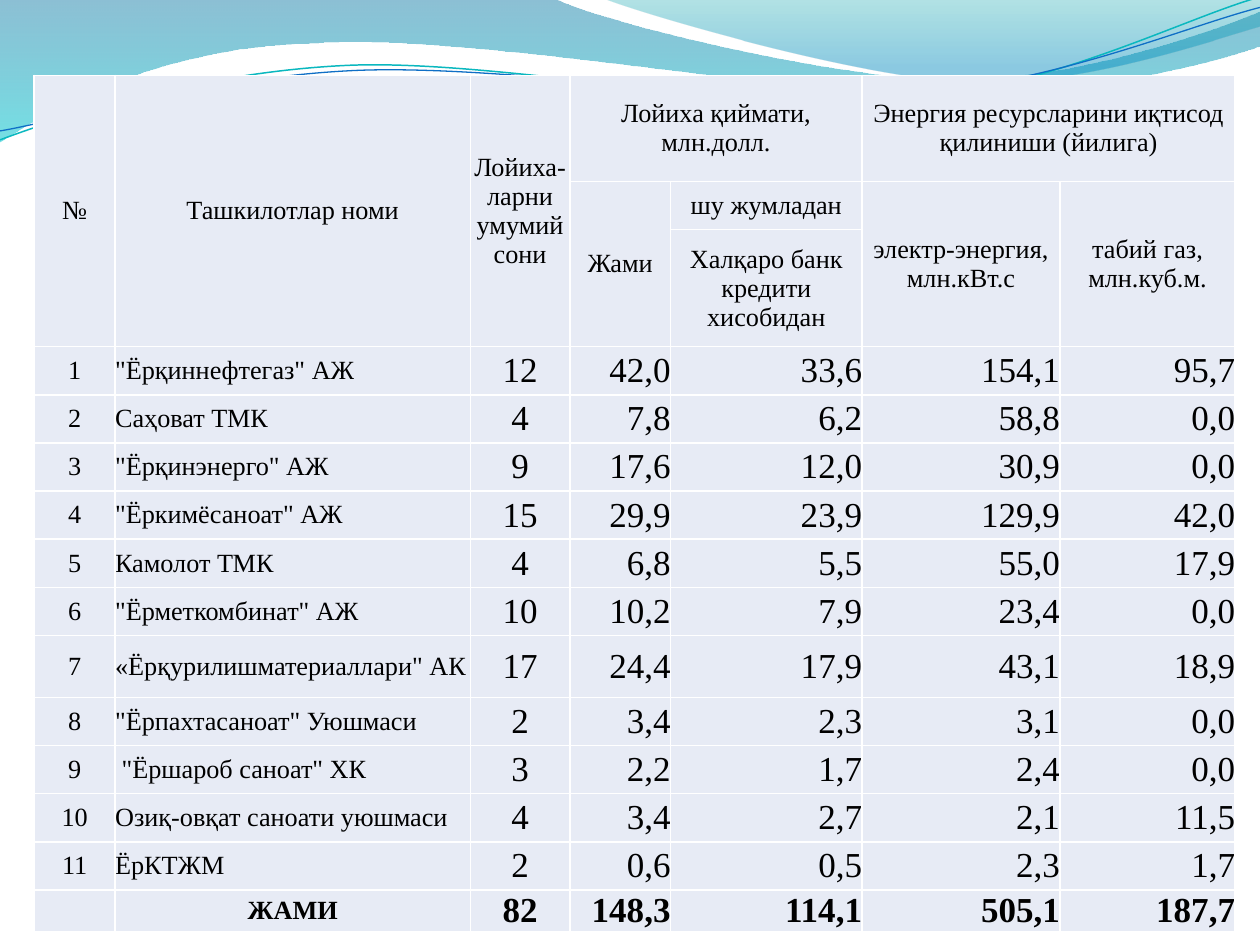
from itertools import product

from lxml.etree import SubElement
from pptx import Presentation
from pptx.dml.color import RGBColor
from pptx.enum.text import MSO_ANCHOR as ANCHOR, PP_ALIGN as ALIGN
from pptx.oxml.ns import qn
from pptx.util import Cm, Pt

FONT = "Times New Roman"
BLACK = RGBColor(0x00, 0x00, 0x00)
WHITE = RGBColor(0xFF, 0xFF, 0xFF)
CELL = RGBColor(0xE7, 0xEB, 0xF5)
BLUE = RGBColor(0x0F, 0x6F, 0xC6)
TEAL = RGBColor(0x0A, 0xB8, 0xBF)
# Gradient stops: position, colour, opacity in percent
BACK_STOPS = [(0, RGBColor(0x00, 0x74, 0xA1), 45), (1, RGBColor(0x00, 0xC6, 0xCF), 55)]
FRONT_STOPS = [(0, RGBColor(0x00, 0xA1, 0xA9), 30), (0.8, RGBColor(0x00, 0x8B, 0xBF), 45)]

# Wave outlines in cm: a pair is a line end, six numbers are a Bezier curve
BACK_WAVE = [
    (0, 0), (11.18, -0.03),
    (12.09, 0.43, 16.87, 1.6, 19.25, 1.6),
    (21.67, 1.6, 24.33, 0.66, 25.4, 0.23),
    (25.43, 0.91),
    (24.97, 1.12, 22.1, 1.93, 18.95, 1.91),
    (15.8, 1.91, 9.7, 0.71, 6.53, 0.86),
    (3.28, 0.91, 1.17, 2.11, -0.03, 2.87),
]
FRONT_WAVE = [
    (12.17, -0.03),
    (12.93, 0.28, 17.32, 1.57, 19.53, 1.65),
    (21.74, 1.75, 24.41, 0.81, 25.4, 0.53),
    (25.4, 0),
]
# The wave lines are given level and then tilted
LINE_TILT = 357.3
TEAL_LINE = [
    (-0.05, 2.22),
    (1.19, 1.82, 4.02, 1.04, 7.05, 1.05),
    (10.05, 1.07, 15.02, 2.37, 18.08, 2.29),
    (21.13, 2.2, 23.87, 0.91, 25.41, 0.55),
]
BLUE_LINE = [
    (-0.04, 2.04),
    (1.16, 1.9, 4.18, 1.15, 7.2, 1.16),
    (10.25, 1.18, 15.13, 2.25, 18.18, 2.17),
    (21.21, 2.1, 23.93, 1.06, 25.45, 0.75),
]

COLS = [1.63, 7.16, 2.01, 2.03, 3.86, 3.99, 3.53]
ROWS = [2.14, 0.97, 2.36] + [0.97] * 6 + [1.25] + [0.97] * 4 + [0.84]
# Header cells: row, column, rows spanned, columns spanned, text
HEADER = [
    (0, 0, 3, 1, "№"),
    (0, 1, 3, 1, "Ташкилотлар номи"),
    (0, 2, 3, 1, "Лойиха-ларни умумий сони"),
    (0, 3, 1, 2, "Лойиха қиймати, млн.долл."),
    (0, 5, 1, 2, "Энергия ресурсларини иқтисод қилиниши (йилига)"),
    (1, 3, 2, 1, "Жами"),
    (1, 4, 1, 1, "шу жумладан"),
    (2, 4, 1, 1, "Халқаро банк кредити хисобидан"),
    (1, 5, 2, 1, "электр-энергия, млн.кВт.с"),
    (1, 6, 2, 1, "табий газ, млн.куб.м."),
]
BODY = [
    ('"Ёрқиннефтегаз" АЖ', "12", "42,0", "33,6", "154,1", "95,7"),
    ("Саҳоват ТМК", "4", "7,8", "6,2", "58,8", "0,0"),
    ('"Ёрқинэнерго" АЖ', "9", "17,6", "12,0", "30,9", "0,0"),
    ('"Ёркимёсаноат" АЖ', "15", "29,9", "23,9", "129,9", "42,0"),
    ("Камолот ТМК", "4", "6,8", "5,5", "55,0", "17,9"),
    ('"Ёрметкомбинат" АЖ', "10", "10,2", "7,9", "23,4", "0,0"),
    ('«Ёрқурилишматериаллари" АК', "17", "24,4", "17,9", "43,1", "18,9"),
    ('"Ёрпахтасаноат" Уюшмаси', "2", "3,4", "2,3", "3,1", "0,0"),
    (' "Ёршароб саноат" ХК', "3", "2,2", "1,7", "2,4", "0,0"),
    ("Озиқ-овқат саноати уюшмаси", "4", "3,4", "2,7", "2,1", "11,5"),
    ("ЁрКТЖМ", "2", "0,6", "0,5", "2,3", "1,7"),
]
TOTAL = ("ЖАМИ", "82", "148,3", "114,1", "505,1", "187,7")


def add_outline(slide, outline, close):
    ends = [(Cm(part[-2]), Cm(part[-1])) for part in outline]
    builder = slide.shapes.build_freeform(*ends[0])
    builder.add_line_segments(ends[1:], close=close)
    s = builder.convert_to_shape()
    s.shadow.inherit = False
    # Turn the segments that have control points into curves
    segments = list(s._element.spPr.iter(qn("a:lnTo")))
    for segment, part in zip(segments, outline[1:]):
        if len(part) == 6:
            segment.tag = qn("a:cubicBezTo")
            for i in (0, 1):
                x, y = Cm(part[2 * i]) - s.left, Cm(part[2 * i + 1]) - s.top
                pt = SubElement(segment, qn("a:pt"), x=str(x), y=str(y))
                segment.insert(i, pt)
    return s


def add_wave(slide, outline, stops):
    s = add_outline(slide, outline, True)
    s.line.fill.background()
    s.fill.gradient()
    s.fill.gradient_angle = 270
    for stop, (position, color, opacity) in zip(s.fill.gradient_stops, stops):
        stop.position = position
        stop.color.rgb = color
    for clr, stop in zip(s.fill._xPr.iter(qn("a:srgbClr")), stops):
        SubElement(clr, qn("a:alpha"), val=str(stop[2] * 1000))


def add_wave_line(slide, outline, color, width):
    s = add_outline(slide, outline, False)
    s.rotation = LINE_TILT
    s.fill.background()
    s.line.color.rgb = color
    s.line.width = Pt(width)


def format_cell(cell):
    cell.margin_left = cell.margin_right = cell.margin_top = cell.margin_bottom = 0
    cell.vertical_anchor = ANCHOR.MIDDLE
    tc_pr = cell._tc.get_or_add_tcPr()
    for side in ("L", "R", "T", "B"):
        ln = SubElement(tc_pr, qn("a:ln" + side), w=str(Pt(1)))
        fill = SubElement(ln, qn("a:solidFill"))
        SubElement(fill, qn("a:srgbClr"), val=str(WHITE))
    cell.fill.solid()
    cell.fill.fore_color.rgb = CELL


def write(cell, text, size=15, align=ALIGN.CENTER, bold=False):
    p = cell.text_frame.paragraphs[0]
    p.alignment = align
    r = p.add_run()
    r.text = text
    r.font.name = FONT
    r.font.size = Pt(size)
    r.font.bold = bold
    r.font.color.rgb = BLACK


def write_numbers(table, row, numbers, bold=False):
    for col, number in enumerate(numbers, 2):
        align = ALIGN.CENTER if col == 2 else ALIGN.RIGHT
        write(table.cell(row, col), number, size=20, align=align, bold=bold)


def add_project_table(slide):
    table = slide.shapes.add_table(len(ROWS), len(COLS), Cm(0.69), Cm(1.52),
                                   Cm(sum(COLS)), Cm(sum(ROWS))).table
    table.first_row = table.horz_banding = False
    for col, width in zip(table.columns, COLS):
        col.width = Cm(width)
    for row, height in zip(table.rows, ROWS):
        row.height = Cm(height)
    for row, col in product(range(len(ROWS)), range(len(COLS))):
        format_cell(table.cell(row, col))

    # Header
    for row, col, height, width, text in HEADER:
        cell = table.cell(row, col)
        if height * width > 1:
            cell.merge(table.cell(row + height - 1, col + width - 1))
        write(cell, text)

    # Organisations
    for number, (name, *numbers) in enumerate(BODY, 1):
        row = number + 2
        write(table.cell(row, 0), str(number))
        write(table.cell(row, 1), name, align=ALIGN.LEFT)
        write_numbers(table, row, numbers)

    # Total
    last = len(ROWS) - 1
    write(table.cell(last, 1), TOTAL[0], bold=True)
    write_numbers(table, last, TOTAL[1:], bold=True)


def main():
    prs = Presentation()
    prs.slide_width, prs.slide_height = Cm(25.4), Cm(19.05)
    slide = prs.slides.add_slide(prs.slide_layouts[6])

    # Waves at the top
    add_wave(slide, BACK_WAVE, BACK_STOPS)
    add_wave(slide, FRONT_WAVE, FRONT_STOPS)
    add_wave_line(slide, TEAL_LINE, TEAL, 0.85)
    add_wave_line(slide, BLUE_LINE, BLUE, 0.75)

    add_project_table(slide)
    prs.save("out.pptx")


if __name__ == "__main__":
    main()
